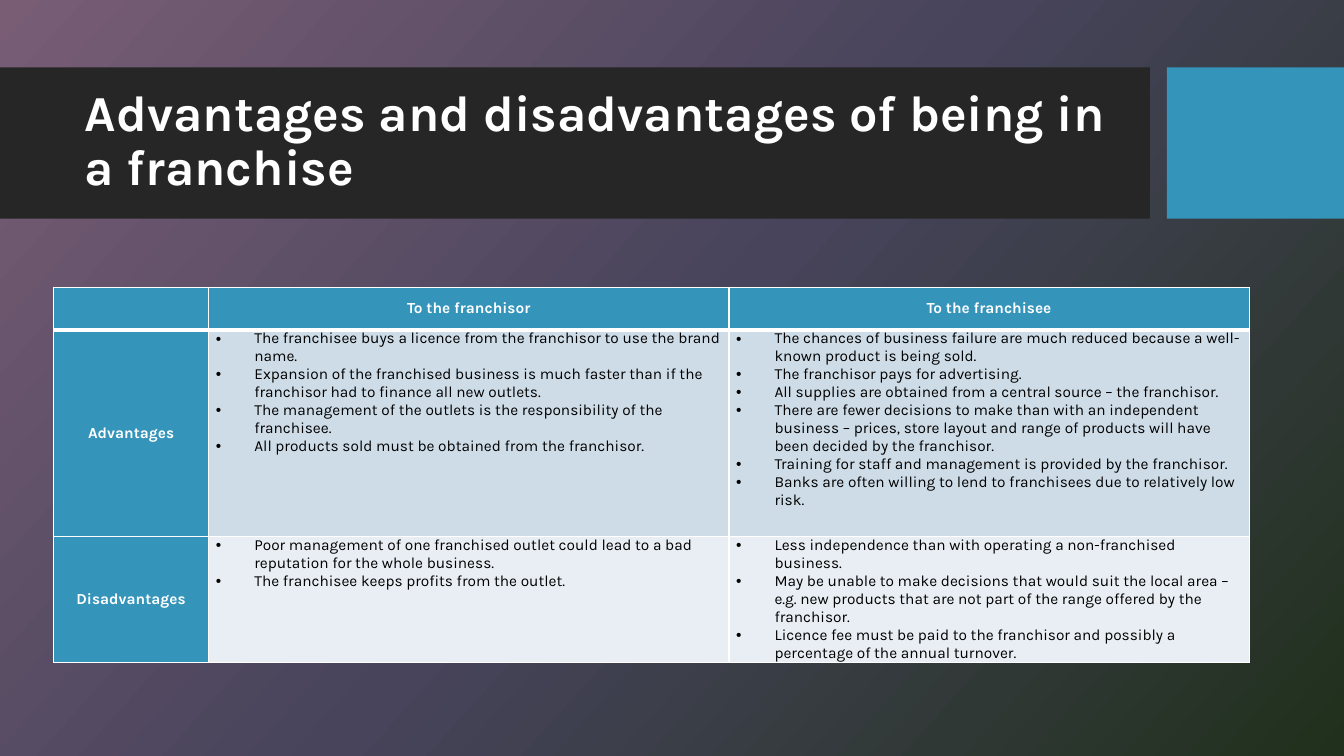
from lxml import etree
from pptx import Presentation
from pptx.dml.color import RGBColor
from pptx.enum.shapes import MSO_SHAPE
from pptx.enum.text import MSO_ANCHOR, PP_ALIGN
from pptx.oxml import parse_xml
from pptx.oxml.ns import nsdecls, qn
from pptx.util import Cm, Pt

RECTANGLE = MSO_SHAPE.RECTANGLE
MIDDLE, TOP = MSO_ANCHOR.MIDDLE, MSO_ANCHOR.TOP
CENTER, LEFT = PP_ALIGN.CENTER, PP_ALIGN.LEFT

FONT = "Karla"
WHITE, BLACK, DARK, BLUE = "FFFFFF", "000000", "262626", "3494BA"
GRADIENT = [(0, "785D75"), (50, "47445B"), (100, "20301C")]
GRADIENT_ANGLE = 42
COLUMN_WIDTHS = [3.91, 13.11, 13.11]
ROW_HEIGHTS = [1.07, 5.21, 3.12]
HEADINGS = ["", "To the franchisor", "To the franchisee"]
BODY = [
    ("Advantages", "CEDCE7", [
        ["The franchisee buys a licence from the franchisor to use the brand name.",
         "Expansion of the franchised business is much faster than if the franchisor "
         "had to finance all new outlets.",
         "The management of the outlets is the responsibility of the franchisee.",
         "All products sold must be obtained from the franchisor."],
        ["The chances of business failure are much reduced because a well-known "
         "product is being sold.",
         "The franchisor pays for advertising.",
         "All supplies are obtained from a central source – the franchisor.",
         "There are fewer decisions to make than with an independent business – prices, "
         "store layout and range of products will have been decided by the franchisor.",
         "Training for staff and management is provided by the franchisor.",
         "Banks are often willing to lend to franchisees due to relatively low risk."],
    ]),
    ("Disadvantages", "E8EEF3", [
        ["Poor management of one franchised outlet could lead to a bad reputation "
         "for the whole business.",
         "The franchisee keeps profits from the outlet."],
        ["Less independence than with operating a non-franchised business.",
         "May be unable to make decisions that would suit the local area – e.g. new "
         "products that are not part of the range offered by the franchisor.",
         "Licence fee must be paid to the franchisor and possibly a percentage of "
         "the annual turnover."],
    ]),
]


def color(value):
    return RGBColor.from_string(value)


def style_font(para, size, value, bold):
    font = para.font
    font.name, font.size, font.bold = FONT, Pt(size), bold
    font.color.rgb = color(value)


def paint_background(page):
    fill = page.background.fill
    fill.gradient()
    fill.gradient_angle = 360 - GRADIENT_ANGLE
    stops = page.background._cSld.find(".//" + qn("a:gsLst"))
    for stop in list(stops):
        stops.remove(stop)
    for position, value in GRADIENT:
        stops.append(parse_xml(
            f'<a:gs {nsdecls("a")} pos="{position * 1000}">'
            f'<a:srgbClr val="{value}"/></a:gs>'))


def add_band(page, left, width, value):
    band = page.shapes.add_shape(RECTANGLE, Cm(left), Cm(1.7), Cm(width), Cm(3.81))
    band.shadow.inherit = False
    band.fill.solid()
    band.fill.fore_color.rgb = color(value)
    band.line.fill.background()


def set_title(page, text):
    title = page.shapes.title
    page.shapes._spTree.append(title._element)
    title.left, title.top, title.width, title.height = Cm(1.88), Cm(2.08), Cm(26.7), Cm(3)
    frame = title.text_frame
    frame.text = text
    frame.word_wrap = True
    frame.vertical_anchor = MIDDLE
    para = frame.paragraphs[0]
    para.alignment = LEFT
    para.line_spacing = 0.9
    style_font(para, 36, WHITE, True)


def set_borders(cell, top, bottom):
    properties = cell._tc.get_or_add_tcPr()
    for side, width in (("L", 1), ("R", 1), ("T", top), ("B", bottom)):
        properties.append(parse_xml(
            f'<a:ln{side} {nsdecls("a")} w="{Pt(width)}"><a:solidFill>'
            f'<a:srgbClr val="{WHITE}"/></a:solidFill></a:ln{side}>'))


def format_cell(cell, fill, anchor, top=1, bottom=1):
    set_borders(cell, top, bottom)
    cell.fill.solid()
    cell.fill.fore_color.rgb = color(fill)
    cell.vertical_anchor = anchor
    cell.margin_left = cell.margin_right = Cm(0.18)
    cell.margin_top = cell.margin_bottom = 0


def fill_label(cell, text, **borders):
    format_cell(cell, BLUE, MIDDLE, **borders)
    cell.text = text
    para = cell.text_frame.paragraphs[0]
    para.alignment = CENTER
    style_font(para, 11, WHITE, True)


def add_bullet(para):
    properties = para._p.get_or_add_pPr()
    properties.set("marL", str(Cm(0.97)))
    properties.set("indent", str(-Cm(0.97)))
    etree.SubElement(properties, qn("a:buFont"), typeface="Arial")
    etree.SubElement(properties, qn("a:buChar"), char="•")


def fill_points(cell, points, fill, top):
    format_cell(cell, fill, TOP, top=top)
    cell.text = "\n".join(points)
    for para in cell.text_frame.paragraphs:
        add_bullet(para)
        style_font(para, 11, BLACK, False)


def add_comparison(page):
    table = page.shapes.add_table(
        len(ROW_HEIGHTS), len(COLUMN_WIDTHS), Cm(1.35), Cm(7.24),
        Cm(sum(COLUMN_WIDTHS)), Cm(sum(ROW_HEIGHTS))).table
    for column, width in zip(table.columns, COLUMN_WIDTHS):
        column.width = Cm(width)
    for row, height in zip(table.rows, ROW_HEIGHTS):
        row.height = Cm(height)
    for index, heading in enumerate(HEADINGS):
        fill_label(table.cell(0, index), heading, bottom=3)
    for row, (label, fill, columns) in enumerate(BODY, 1):
        top = 3 if row == 1 else 1
        fill_label(table.cell(row, 0), label, top=top)
        for column, points in enumerate(columns, 1):
            fill_points(table.cell(row, column), points, fill, top)


def main():
    deck = Presentation()
    deck.slide_width, deck.slide_height = Cm(33.87), Cm(19.05)
    page = deck.slides.add_slide(deck.slide_layouts[5])
    paint_background(page)
    add_band(page, 0, 28.98, DARK)
    add_band(page, 29.41, 4.46, BLUE)
    set_title(page, "Advantages and disadvantages of being in a franchise")
    add_comparison(page)
    deck.save("out.pptx")


if __name__ == "__main__":
    main()
